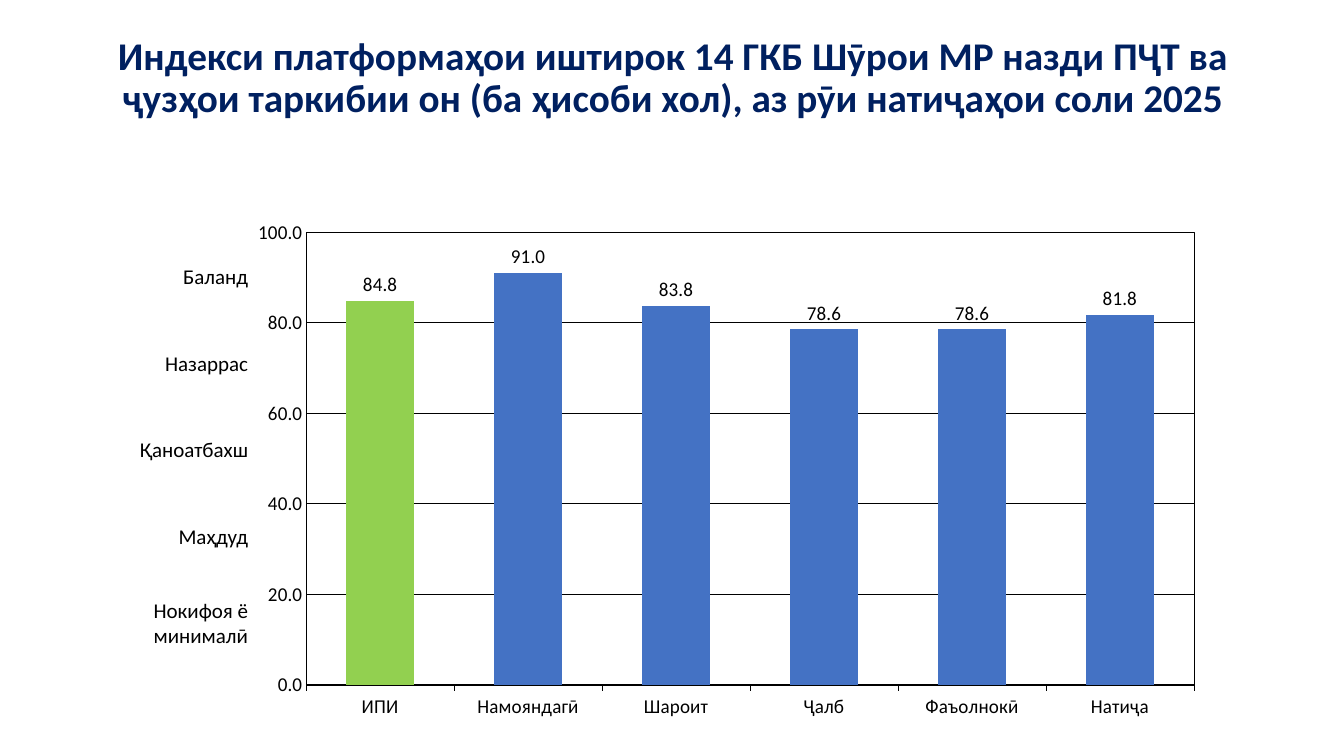
"""Build a slide with a column chart of participation index scores and rating bands."""
import pptx
import pptx.chart.data
import pptx.dml.color
import pptx.enum.chart
import pptx.enum.shapes
import pptx.enum.text
import pptx.oxml
import pptx.oxml.ns
import pptx.util

Inches, Pt = pptx.util.Inches, pptx.util.Pt
RGBColor = pptx.dml.color.RGBColor
Align, Anchor = pptx.enum.text.PP_ALIGN, pptx.enum.text.MSO_ANCHOR
charts = pptx.enum.chart

NAVY = RGBColor(0x00, 0x20, 0x60)
BLACK = RGBColor(0x00, 0x00, 0x00)
WHITE = RGBColor(0xFF, 0xFF, 0xFF)
BLUE = RGBColor(0x44, 0x72, 0xC4)
GREEN = RGBColor(0x92, 0xD0, 0x50)

TITLE = ("Индекси платформаҳои иштирок 14 ГКБ Шӯрои МР назди ПҶТ ва "
         "ҷузҳои таркибии он (ба ҳисоби хол), аз рӯи натиҷаҳои соли 2025")
SCORES = {"ИПИ": 84.8, "Намояндагӣ": 91.0, "Шароит": 83.8,
          "Ҷалб": 78.6, "Фаъолнокӣ": 78.6, "Натиҷа": 81.8}
BANDS = [("Баланд", 2.31), ("Назаррас", 2.31), ("Қаноатбахш", 2.31),
         ("Маҳдуд", 2.31), ("Нокифоя ё минималӣ", 1.96)]
BAND_TOP, BAND_PITCH, BAND_RIGHT = 2.31, 0.86, 2.56
TITLE_BOX = (0.92, 0.61, 11.5, 0.77)
CHART_BOX = (2.56, 2.1, 9.96, 5.16)
PLOT_SHARES = {"x": 0.02, "y": 0.04, "w": 0.91, "h": 0.87}

TITLE_FONT = {"name": "Calibri", "size": Pt(28), "bold": True}
BAND_FONT = {"name": "Calibri", "size": Pt(15)}
CHART_FONT = {"name": "Calibri", "size": Pt(14)}
TITLE_FRAME = {"word_wrap": True, "vertical_anchor": Anchor.MIDDLE,
               "margin_bottom": Inches(0.47)}
BAND_FRAME = {"word_wrap": True, "vertical_anchor": Anchor.MIDDLE}
CATEGORY_AXIS = {"major_tick_mark": charts.XL_TICK_MARK.OUTSIDE,
                 "minor_tick_mark": charts.XL_TICK_MARK.NONE,
                 "has_major_gridlines": False,
                 "crosses": charts.XL_AXIS_CROSSES.MAXIMUM}
VALUE_AXIS = {"major_tick_mark": charts.XL_TICK_MARK.NONE,
              "minor_tick_mark": charts.XL_TICK_MARK.NONE,
              "minimum_scale": 0, "maximum_scale": 100, "major_unit": 20,
              "has_major_gridlines": True}
NUMBERS = {"number_format": "0.0", "number_format_is_linked": False}
LABELS = {"show_value": True, "position": charts.XL_LABEL_POSITION.OUTSIDE_END}


def apply(target, values):
    for name, value in values.items():
        setattr(target, name, value)


def set_font(font, values, color):
    apply(font, values)
    font.color.rgb = color


def paint(fill, color):
    fill.solid()
    fill.fore_color.rgb = color


def draw_line(line, width):
    line.color.rgb = BLACK
    line.width = Pt(width)


def write(box, text, frame_values, para_values, font_values, color):
    apply(box.text_frame, frame_values)
    para = box.text_frame.paragraphs[0]
    apply(para, para_values)
    span = para.add_run()
    span.text = text
    set_font(span.font, font_values, color)


def place_plot(chart):
    plot_area = chart._chartSpace.chart.plotArea
    qn = pptx.oxml.ns.qn
    for old in plot_area.findall(qn("c:layout")):
        plot_area.remove(old)
    namespaces = pptx.oxml.ns.nsdecls("c", "a")
    shares = "".join(f'<c:{key} val="{share}"/>' for key, share in PLOT_SHARES.items())
    plot_area.insert(0, pptx.oxml.parse_xml(
        f'<c:layout {namespaces}><c:manualLayout><c:layoutTarget val="inner"/>'
        f'<c:xMode val="edge"/><c:yMode val="edge"/>{shares}</c:manualLayout></c:layout>'))
    plot_area.append(pptx.oxml.parse_xml(
        f'<c:spPr {namespaces}><a:noFill/><a:ln w="3175"><a:solidFill>'
        f'<a:srgbClr val="{BLACK}"/></a:solidFill></a:ln></c:spPr>'))


def add_bands(page):
    for row, (text, width) in enumerate(BANDS):
        lengths = (BAND_RIGHT - width, BAND_TOP + row * BAND_PITCH, width, BAND_PITCH)
        box = page.shapes.add_shape(pptx.enum.shapes.MSO_SHAPE.RECTANGLE,
                                    *map(Inches, lengths))
        box.shadow.inherit = False
        paint(box.fill, WHITE)
        box.line.fill.background()
        write(box, text, BAND_FRAME, {"alignment": Align.RIGHT}, BAND_FONT, BLACK)


def add_score_chart(page):
    scores = pptx.chart.data.CategoryChartData(number_format="0.0")
    scores.categories = list(SCORES)
    scores.add_series("Series 1", list(SCORES.values()))
    chart = page.shapes.add_chart(charts.XL_CHART_TYPE.COLUMN_CLUSTERED,
                                  *map(Inches, CHART_BOX), scores).chart
    apply(chart, {"has_legend": False, "has_title": False})
    set_font(chart.font, CHART_FONT, BLACK)

    plot = chart.plots[0]
    apply(plot, {"gap_width": 117, "overlap": -27,
                 "vary_by_categories": False, "has_data_labels": True})
    apply(plot.data_labels, LABELS | NUMBERS)
    set_font(plot.data_labels.font, CHART_FONT, BLACK)
    columns = plot.series[0]
    paint(columns.format.fill, BLUE)
    paint(columns.points[0].format.fill, GREEN)

    for axis, values, width in ((chart.category_axis, CATEGORY_AXIS, 0.25),
                                (chart.value_axis, VALUE_AXIS, 0)):
        apply(axis, values)
        draw_line(axis.format.line, width)
        set_font(axis.tick_labels.font, CHART_FONT, BLACK)
    apply(chart.value_axis.tick_labels, NUMBERS)
    draw_line(chart.value_axis.major_gridlines.format.line, 0)
    place_plot(chart)


def main():
    deck = pptx.Presentation()
    apply(deck, {"slide_width": Inches(13.33), "slide_height": Inches(7.5)})
    page = deck.slides.add_slide(deck.slide_layouts[6])
    title = page.shapes.add_textbox(*map(Inches, TITLE_BOX))
    write(title, TITLE, TITLE_FRAME,
          {"alignment": Align.CENTER, "line_spacing": 0.9}, TITLE_FONT, NAVY)
    add_bands(page)
    add_score_chart(page)
    deck.save("out.pptx")


if __name__ == "__main__":
    main()
